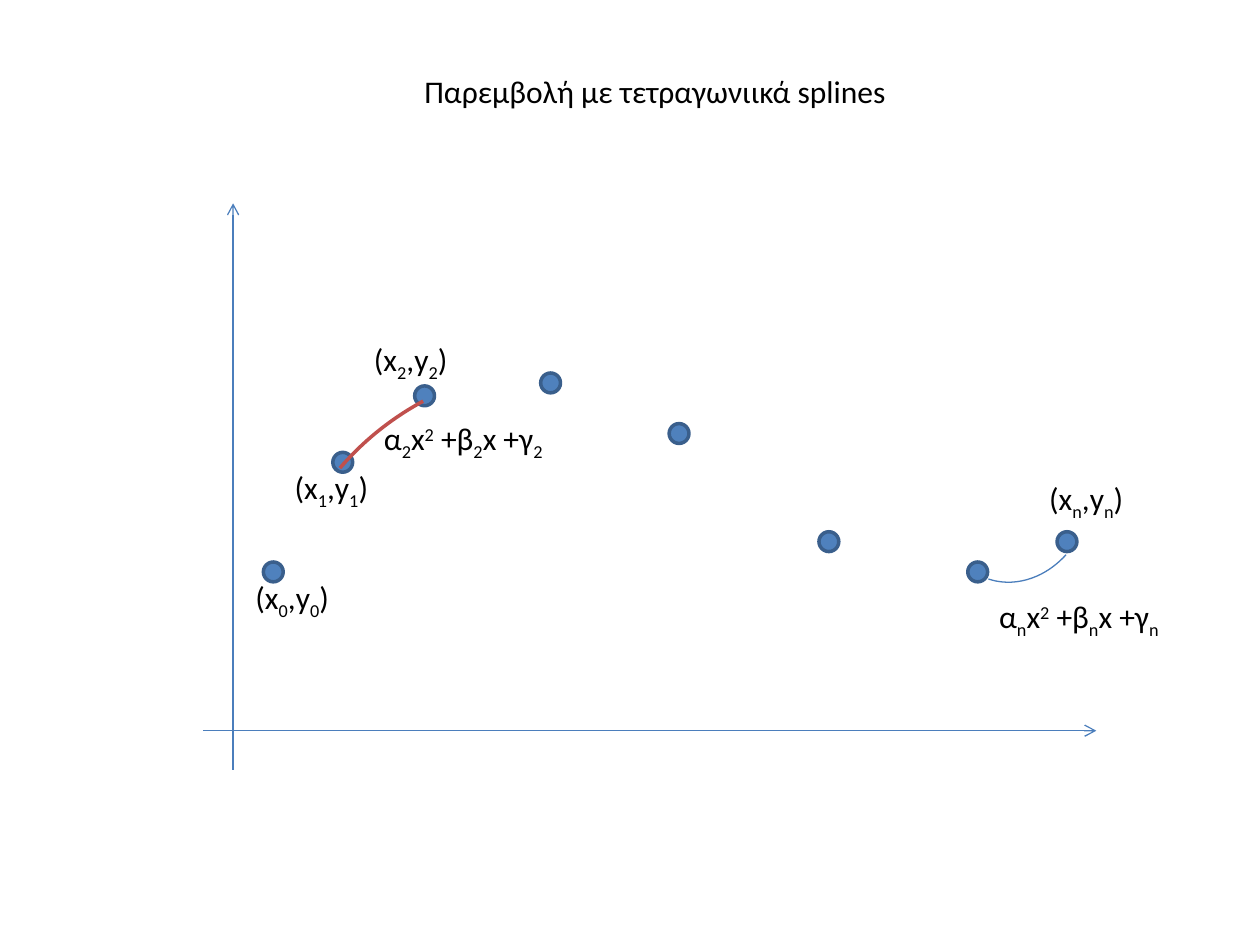
from itertools import zip_longest

from lxml import etree
from pptx import Presentation
from pptx import util as u
from pptx.dml.color import RGBColor
from pptx.enum import shapes, text
from pptx.oxml.ns import qn

INK = {"text": "000000", "axis": "4B7EBC", "dot": "4F81BD",
       "rim": "3A5F8C", "curve": "C0504D"}
BASE = {"_": "-25000", "^": "30000"}
ROW = 1.02


def hue(name):
    return RGBColor.from_string(INK[name])


def pen(line, name, width):
    line.color.rgb = hue(name)
    line.width = u.Pt(width)


def place(shape, left, top, width, height):
    shape.left, shape.top = u.Cm(left), u.Cm(top)
    shape.width, shape.height = u.Cm(width), u.Cm(height)


def write(shape, words, size=18, font="Calibri", color="text",
          align=text.PP_ALIGN.LEFT, wrap=False):
    frame = shape.text_frame
    frame.word_wrap = wrap
    frame.auto_size = text.MSO_AUTO_SIZE.SHAPE_TO_FIT_TEXT
    frame.vertical_anchor = text.MSO_ANCHOR.TOP
    para = frame.paragraphs[0]
    para.alignment = align
    for part in words.split("|"):
        run = para.add_run()
        run.text = part.lstrip("_^")
        run.font.size = u.Pt(size)
        run.font.name = font
        run.font.color.rgb = hue(color)
        if part[0] in BASE:
            run.font._element.set("baseline", BASE[part[0]])


def head(slide, left, top, width, height):
    title = slide.shapes.title
    place(title, left, top, width, height)
    write(title, "Παρεμβολή με τετραγωνιικά splines",
          align=text.PP_ALIGN.CENTER, wrap=True)


def axis(slide, x1, y1, x2, y2):
    line = slide.shapes.add_connector(
        shapes.MSO_CONNECTOR.STRAIGHT, *map(u.Cm, (x1, y1, x2, y2)))
    pen(line.line, "axis", 0.75)
    etree.SubElement(line.line._get_or_add_ln(), qn("a:tailEnd"), type="arrow")
    etree.SubElement(line._element.spPr, qn("a:effectLst"))


def dot(slide, x, y, size=0.4):
    ball = slide.shapes.add_shape(
        shapes.MSO_SHAPE.OVAL,
        *map(u.Cm, (x - size / 2, y - size / 2, size, size)))
    ball.shadow.inherit = False
    ball.fill.solid()
    ball.fill.fore_color.rgb = hue("dot")
    pen(ball.line, "rim", 2)


def arc(slide, box, turn, ends, color, width):
    bow = slide.shapes.add_shape(shapes.MSO_SHAPE.ARC, *map(u.Cm, box))
    bow.shadow.inherit = False
    bow.rotation = turn
    bow.adjustments[0], bow.adjustments[1] = ends
    bow.fill.background()
    pen(bow.line, color, width)


def label(slide, words, left, top, width):
    box = slide.shapes.add_textbox(*map(u.Cm, (left, top, width, ROW)))
    write(box, words)


def plot(slide, left, top, width, height):
    base = top + height - 0.79
    stem = left + 0.6
    axis(slide, stem, top + height, stem, top)
    axis(slide, left, base, left + width, base)

    for x, y in [(1.41, 7.43), (2.81, 5.22), (4.46, 3.88), (7, 3.62),
                 (9.59, 4.64), (12.61, 6.82), (15.61, 7.43), (17.41, 6.82)]:
        dot(slide, left + x, top + y)

    arc(slide, (left + 1.56, top + 3.09, 11.35, 11.71), 261.2,
        (190.59, 203.59), "curve", 2)
    arc(slide, (left + 14.39, top + 4.08, 3.94, 3.2), 101.3,
        (187.46, 2.69), "axis", 0.75)

    for key, x, y in [("0", 0.8, 7.43), ("1", 1.59, 5.22),
                      ("2", 3.19, 2.63), ("n", 16.8, 5.43)]:
        label(slide, f"(x|_{key}|,y|_{key}|)", left + x, top + y, 2.06)
    for key, x, y in [("2", 3.39, 4.23), ("n", 15.79, 7.81)]:
        label(slide, f"α|_{key}|x|^2| +β|_{key}|x +γ|_{key}",
              left + x, top + y, 4.01)


def main():
    deck = Presentation()
    deck.slide_width, deck.slide_height = u.Cm(25.4), u.Cm(19.05)
    slide = deck.slides.add_slide(deck.slide_layouts[5])
    head(slide, 3.3, 1.32, 19.81, ROW)
    plot(slide, 4.1, 4.1, 18, 11.42)
    deck.save("out.pptx")


if __name__ == "__main__":
    main()
